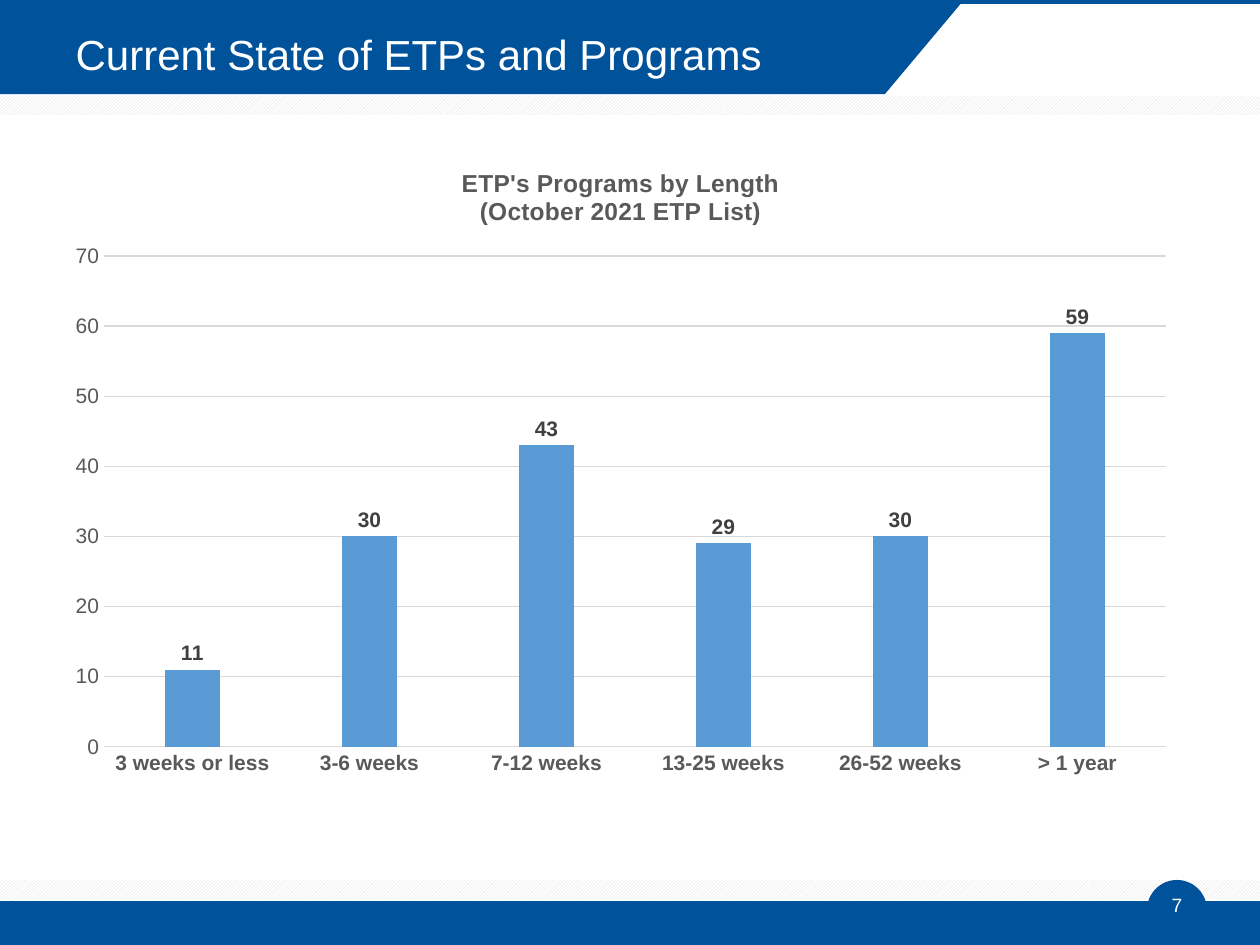
from lxml import etree
from pptx import Presentation
from pptx import util as u
from pptx.chart.data import CategoryChartData
from pptx.dml.color import RGBColor
from pptx.enum import chart as ch, dml, shapes, text
from pptx.oxml.ns import qn

BLUE = RGBColor(0x00, 0x52, 0x9B)
BAR = RGBColor(0x5B, 0x9B, 0xD5)
WHITE = RGBColor(0xFF, 0xFF, 0xFF)
LIGHT = RGBColor(0xD9, 0xD9, 0xD9)
GREY = RGBColor(0x59, 0x59, 0x59)
DARK = RGBColor(0x40, 0x40, 0x40)

W, H = 1260, 945
PROGRAMS = {"3 weeks or less": 11, "3-6 weeks": 30, "7-12 weeks": 43,
            "13-25 weeks": 29, "26-52 weeks": 30, "> 1 year": 59}


def px(n):
    return u.Emu(round(n * 914400 / 126))


def style(font, size, color, bold=False):
    font.name, font.size, font.bold = "Arial", u.Pt(size), bold
    font.color.rgb = color


def paint(sp):
    sp.fill.solid()
    sp.fill.fore_color.rgb = BLUE
    sp.line.fill.background()
    sp.shadow.inherit = False


def polygon(s, points):
    fb = s.shapes.build_freeform(*points[0], scale=914400 / 126)
    fb.add_line_segments(points[1:], close=True)
    paint(fb.convert_to_shape())


def band(s, x, y, w, h):
    polygon(s, [(x, y), (x + w, y), (x + w, y + h), (x, y + h)])


def hatched_strip(s, x, y, w, h):
    sp = s.shapes.add_shape(shapes.MSO_SHAPE.RECTANGLE, px(x), px(y), px(w), px(h))
    paint(sp)
    sp.fill.patterned()
    sp.fill.pattern = dml.MSO_PATTERN.LIGHT_UPWARD_DIAGONAL
    sp.fill.fore_color.rgb = LIGHT
    sp.fill.back_color.rgb = WHITE


def header(s, x, y, w, h):
    # Slanted title band, thin top rule and hatched strip
    polygon(s, [(x, y + 1), (x + 963, y + 1), (x + 885, y + 94), (x, y + 94)])
    band(s, x, y, w, 4)
    hatched_strip(s, x, y + 96, w, h - 96)

    # Title, brought in front of its band
    sp = s.shapes.title
    sp.element.getparent().append(sp.element)
    sp.left, sp.top, sp.width, sp.height = px(x + 63), px(y + 11), px(819), px(91)
    tf = sp.text_frame
    tf.text = "Current State of ETPs and Programs"
    tf.word_wrap = True
    tf.vertical_anchor = text.MSO_ANCHOR.MIDDLE
    tf.margin_top = tf.margin_bottom = 0
    p = tf.paragraphs[0]
    p.alignment = text.PP_ALIGN.LEFT
    p.line_spacing = 0.9
    style(p.runs[0].font, 24, WHITE)


def footer(s, x, y, w, h, number):
    hatched_strip(s, x, y, w, 19)
    band(s, x, y + 21, w, h - 21)

    # Page number on its disc
    left, size = x + w - 113, 60
    paint(s.shapes.add_shape(shapes.MSO_SHAPE.OVAL, px(left), px(y), px(size), px(size)))
    tf = s.shapes.add_textbox(px(left), px(y), px(size), px(50)).text_frame
    tf.word_wrap = True
    tf.vertical_anchor = text.MSO_ANCHOR.MIDDLE
    tf.text = number
    p = tf.paragraphs[0]
    p.alignment = text.PP_ALIGN.CENTER
    style(p.runs[0].font, 11, WHITE)


def set_layout(parent, index, **values):
    for old in parent.findall(qn("c:layout")):
        parent.remove(old)
    layout = etree.Element(qn("c:layout"))
    manual = etree.SubElement(layout, qn("c:manualLayout"))
    for name, value in values.items():
        etree.SubElement(manual, qn("c:" + name)).set("val", str(value))
    parent.insert(index, layout)


def length_chart(s, x, y, w, h):
    data = CategoryChartData()
    data.categories = list(PROGRAMS)
    data.add_series("Series 1", list(PROGRAMS.values()))
    chart = s.shapes.add_chart(ch.XL_CHART_TYPE.COLUMN_CLUSTERED,
                               px(x), px(y), px(w), px(h), data).chart
    chart.has_legend = False
    chart.font.name, chart.font.size = "Calibri", u.Pt(10)

    # Chart title
    chart.has_title = True
    title = chart.chart_title
    title.text_frame.text = "ETP's Programs by Length\n(October 2021 ETP List)"
    for p in title.text_frame.paragraphs:
        style(p.runs[0].font, 14, GREY, True)
    title.include_in_layout = False
    set_layout(title.element, 1, xMode="edge", yMode="edge",
               x=round(405 / w, 4), y=round(19 / h, 4))

    # Columns and labels
    plot = chart.plots[0]
    plot.gap_width, plot.overlap = 219, -27
    plot.vary_by_categories = False
    fill = plot.series[0].format.fill
    fill.solid()
    fill.fore_color.rgb = BAR
    plot.has_data_labels = True
    labels = plot.data_labels
    labels.show_value = True
    labels.position = ch.XL_LABEL_POSITION.OUTSIDE_END
    style(labels.font, 12, DARK, True)

    # Axes
    cat, val = chart.category_axis, chart.value_axis
    for axis in (cat, val):
        axis.major_tick_mark = axis.minor_tick_mark = ch.XL_TICK_MARK.NONE
        style(axis.tick_labels.font, 12, GREY, axis is cat)
    val.minimum_scale, val.maximum_scale, val.major_unit = 0, 70, 10
    val.format.line.fill.background()
    for line in (cat.format.line, val.major_gridlines.format.line):
        line.color.rgb = LIGHT
        line.width = u.Pt(0.75)

    set_layout(chart.element.find(".//" + qn("c:plotArea")), 0,
               layoutTarget="inner", xMode="edge", yMode="edge",
               x=round(51 / w, 4), y=round(111 / h, 4),
               w=round(1062 / w, 4), h=round(491 / h, 4))


def main():
    prs = Presentation()
    prs.slide_width, prs.slide_height = px(W), px(H)
    s = prs.slides.add_slide(prs.slide_layouts[5])
    header(s, 0, 0, W, 115)
    footer(s, 0, 880, W, H - 880, "7")
    length_chart(s, 53, 145, 1137, 643)
    prs.save("out.pptx")


if __name__ == "__main__":
    main()
